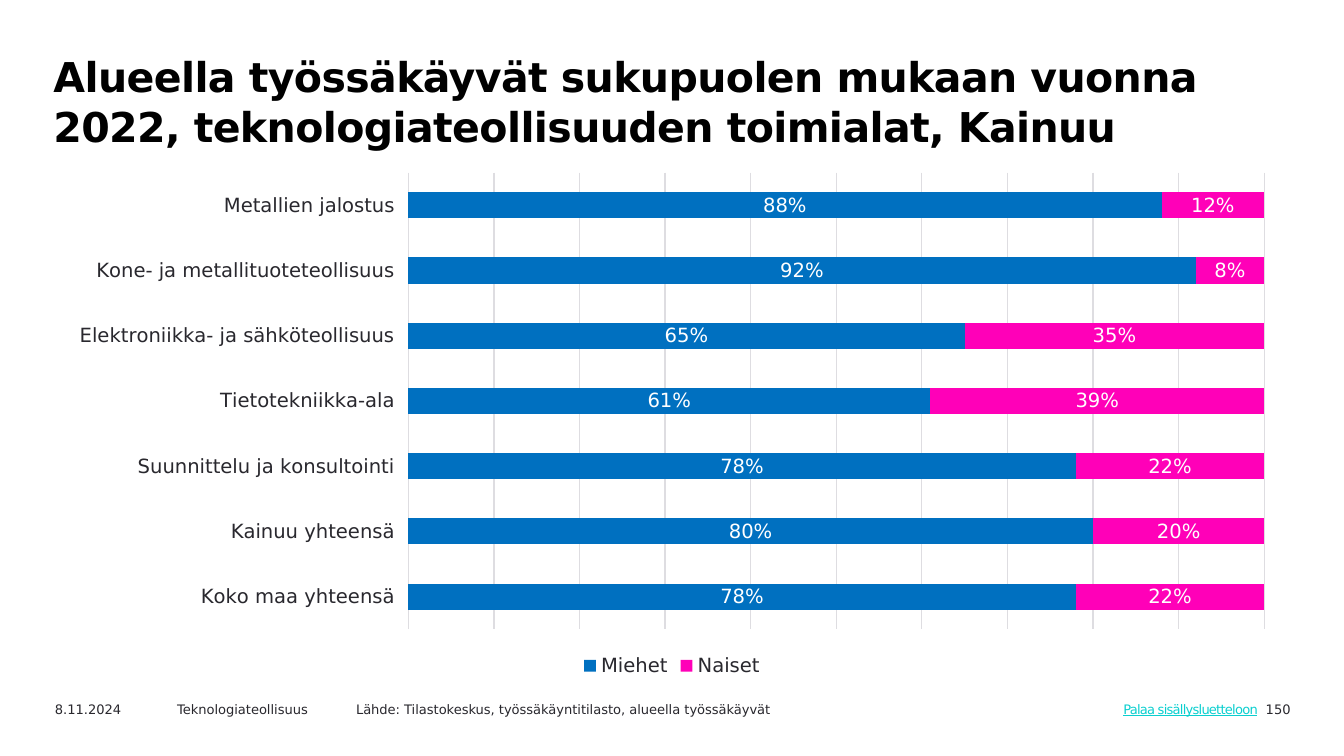
from pptx import Presentation
from pptx.chart.data import CategoryChartData
from pptx.dml.color import RGBColor
from pptx.enum.chart import XL_CHART_TYPE as ChartType, XL_LEGEND_POSITION as LegendPosition
from pptx.enum.chart import XL_TICK_LABEL_POSITION as LabelPosition, XL_TICK_MARK as TickMark
from pptx.enum.text import MSO_ANCHOR as Anchor, MSO_AUTO_SIZE as AutoSize, PP_ALIGN as Align
from pptx.util import Cm, Pt

BLACK = RGBColor(0x00, 0x00, 0x00)
WHITE = RGBColor(0xFF, 0xFF, 0xFF)
INK = RGBColor(0x29, 0x28, 0x2E)
GRID = RGBColor(0xDE, 0xDD, 0xE1)
BLUE = RGBColor(0x00, 0x70, 0xC0)
PINK = RGBColor(0xFF, 0x00, 0xB8)
TURQUOISE = RGBColor(0x0A, 0xCF, 0xCF)

FONT = "DejaVu Sans"
INSET = (0.25, 0.13, 0.25, 0.13)

CATEGORIES = (
    "Koko maa yhteensä",
    "Kainuu yhteensä",
    "Suunnittelu ja konsultointi",
    "Tietotekniikka-ala",
    "Elektroniikka- ja sähköteollisuus",
    "Kone- ja metallituoteteollisuus",
    "Metallien jalostus",
)
SHARES = (
    ("Miehet", BLUE, (0.78, 0.80, 0.78, 0.61, 0.65, 0.92, 0.88)),
    ("Naiset", PINK, (0.22, 0.20, 0.22, 0.39, 0.35, 0.08, 0.12)),
)


def apply(target, values):
    for key, value in values.items():
        setattr(target, key, value)


def style_font(font, size, color, **extra):
    apply(font, {"name": FONT, "size": Pt(size), **extra})
    font.color.rgb = color


def style_line(line):
    line.width = Pt(0.75)
    line.color.rgb = GRID


def add_text(slide, box, text, size, color, inset=INSET, spacing=None, paragraph_format=None, **font):
    frame = slide.shapes.add_textbox(*map(Cm, box)).text_frame
    apply(frame, {"word_wrap": True, "vertical_anchor": Anchor.TOP})
    sides = ("margin_left", "margin_top", "margin_right", "margin_bottom")
    apply(frame, dict(zip(sides, map(Cm, inset))))
    paragraph = frame.paragraphs[0]
    apply(paragraph, paragraph_format or {})
    run = paragraph.add_run()
    run.text = text
    style_font(run.font, size, color, **font)
    if spacing is not None:
        run.font._element.set("spc", str(spacing))
    return frame


def add_title(slide, box):
    add_text(
        slide, box,
        "Alueella työssäkäyvät sukupuolen mukaan vuonna 2022, teknologiateollisuuden toimialat, Kainuu",
        22, BLACK, inset=(0.3, 0.16, 0.25, 0.13), spacing=-30,
        paragraph_format={"line_spacing": Pt(27)}, bold=True,
    )


def add_share_chart(slide, box):
    data = CategoryChartData(number_format="0%")
    data.categories = CATEGORIES
    for name, _, values in SHARES:
        data.add_series(name, values)
    chart = slide.shapes.add_chart(ChartType.BAR_STACKED_100, *map(Cm, box), data).chart
    apply(chart, {"has_title": False, "has_legend": True})
    style_font(chart.font, 10.5, INK)
    apply(chart.legend, {"position": LegendPosition.BOTTOM, "include_in_layout": False})
    style_font(chart.legend.font, 10.5, INK)

    industries = chart.category_axis
    apply(industries, {
        "major_tick_mark": TickMark.NONE,
        "minor_tick_mark": TickMark.NONE,
        "tick_label_position": LabelPosition.LOW,
        "has_major_gridlines": False,
    })
    style_font(industries.tick_labels.font, 10.5, INK)
    style_line(industries.format.line)

    percent = chart.value_axis
    apply(percent, {
        "visible": False,
        "has_major_gridlines": True,
        "minimum_scale": 0,
        "maximum_scale": 1,
        "major_unit": 0.1,
    })
    apply(percent.tick_labels, {"number_format": "0%", "number_format_is_linked": False})
    style_line(percent.major_gridlines.format.line)

    bars = chart.plots[0]
    apply(bars, {"gap_width": 150, "overlap": 100, "vary_by_categories": False})
    for series, (_, color, _) in zip(bars.series, SHARES):
        series.format.fill.solid()
        series.format.fill.fore_color.rgb = color
        labels = series.data_labels
        apply(labels, {"show_value": True, "number_format": "0%", "number_format_is_linked": False})
        style_font(labels.font, 10.5, WHITE)


def add_footer(slide, box):
    left, top, width, height = box
    notes = (
        (0, 2.54, "8.11.2024"),
        (2.31, 3.61, "Teknologiateollisuus"),
        (5.69, 12.5, "Lähde: Tilastokeskus, työssäkäyntitilasto, alueella työssäkäyvät"),
    )
    for offset, note_width, text in notes:
        add_text(slide, (left + offset, top, note_width, height), text, 7, INK)
    number_width = 2.39
    add_text(slide, (left + width - number_width, top, number_width, height), "150", 7, INK,
             paragraph_format={"alignment": Align.RIGHT})
    contents = add_text(slide, (left + 20.34, top + 0.03, 3.1, 0.51), "Palaa sisällysluetteloon",
                        7, TURQUOISE, inset=(0.1,) * 4, spacing=-40, underline=True)
    contents.auto_size = AutoSize.SHAPE_TO_FIT_TEXT


def main():
    deck = Presentation()
    apply(deck, {"slide_width": Cm(25.4), "slide_height": Cm(14.29)})
    slide = deck.slides.add_slide(deck.slide_layouts[6])
    add_title(slide, (0.71, 0.79, 22.2, 2.29))
    add_share_chart(slide, (1.04, 3.07, 23.32, 9.83))
    add_footer(slide, (0.79, 13.13, 23.85, 0.46))
    deck.save("out.pptx")


if __name__ == "__main__":
    main()
